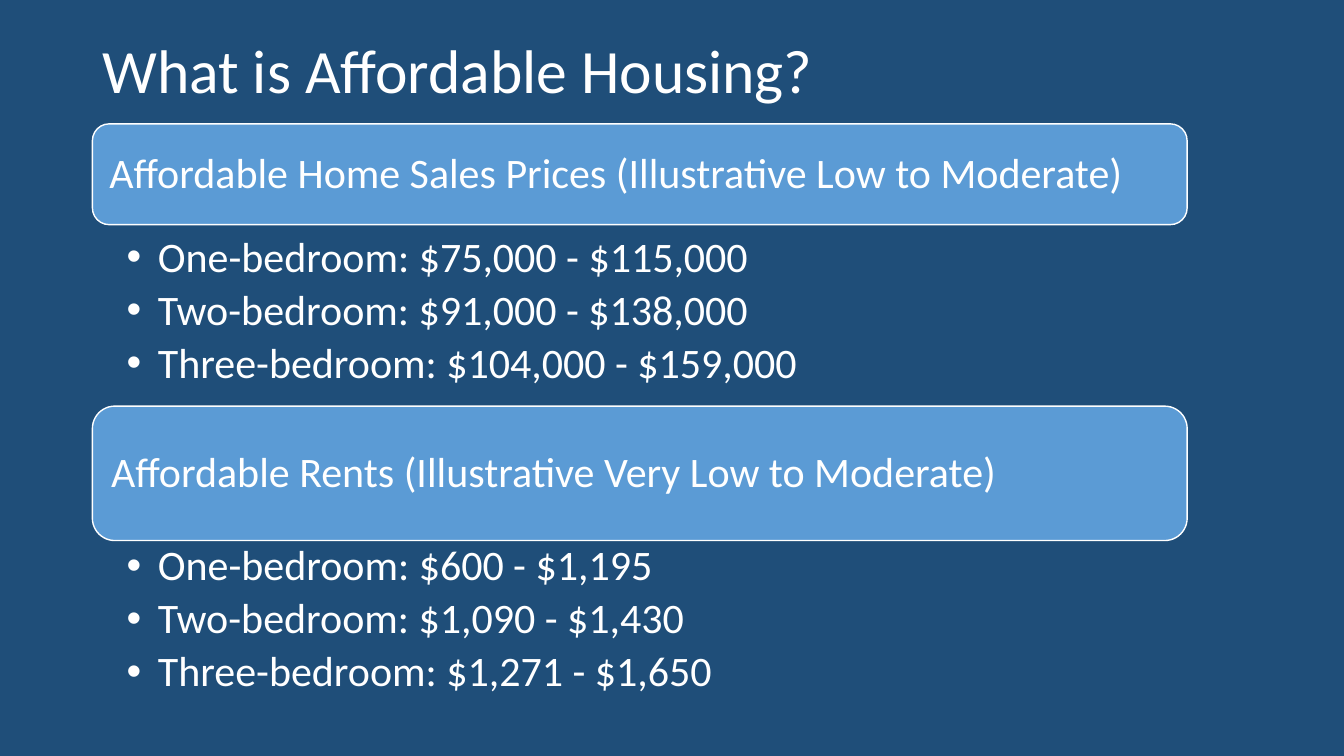
from dataclasses import dataclass

from pptx import Presentation
from pptx.dml.color import RGBColor
from pptx.enum.shapes import MSO_SHAPE
from pptx.enum.text import MSO_ANCHOR, MSO_AUTO_SIZE, PP_ALIGN
from pptx.util import Inches, Length, Pt


@dataclass(frozen=True)
class Theme:
    background: RGBColor = RGBColor(0x1F, 0x4E, 0x79)
    banner: RGBColor = RGBColor(0x5B, 0x9B, 0xD5)
    text: RGBColor = RGBColor(0xFF, 0xFF, 0xFF)
    font: str = "Calibri"
    title_size: int = 44
    body_size: int = 30


@dataclass(frozen=True)
class Section:
    heading: str
    prices: tuple[str, ...]
    banner_rows: float
    gap_rows: float


THEME = Theme()
COLUMNS, ROWS = 160, 90  # twelve grid cells to the inch
LEFT, WIDTH = 11, 130.33
FIRST_BANNER, LIST_ROWS = 14.75, 20.75

SECTIONS = (
    Section(
        "Affordable Home Sales Prices (Illustrative Low to Moderate)",
        (
            "One-bedroom: $75,000 - $115,000",
            "Two-bedroom: $91,000 - $138,000",
            "Three-bedroom: $104,000 - $159,000",
        ),
        banner_rows=12,
        gap_rows=0.85,
    ),
    Section(
        "Affordable Rents (Illustrative Very Low to Moderate)",
        (
            "One-bedroom: $600 - $1,195",
            "Two-bedroom: $1,090 - $1,430",
            "Three-bedroom: $1,271 - $1,650",
        ),
        banner_rows=16,
        gap_rows=0,
    ),
)


def cells(count: float) -> Length:
    return Inches(count / 12)


def place(sp, left: float, top: float, width: float, height: float) -> None:
    sp.left, sp.top = cells(left), cells(top)
    sp.width, sp.height = cells(width), cells(height)


def format_text(tf, size: int, anchor: MSO_ANCHOR, insets: tuple[float, ...],
                space_after: float = 0) -> None:
    tf.word_wrap = True
    tf.auto_size = MSO_AUTO_SIZE.NONE
    tf.vertical_anchor = anchor
    tf.margin_left, tf.margin_top, tf.margin_right, tf.margin_bottom = map(Inches, insets)
    for p in tf.paragraphs:
        p.alignment = PP_ALIGN.LEFT
        p.line_spacing = 0.9
        p.space_before, p.space_after = Pt(0), Pt(space_after)
        for r in p.runs:
            r.font.name = THEME.font
            r.font.size = Pt(size)
            r.font.color.rgb = THEME.text


def add_banner(slide, section: Section, top: float) -> None:
    sp = slide.shapes.add_shape(MSO_SHAPE.ROUNDED_RECTANGLE, 0, 0, 0, 0)
    place(sp, LEFT, top, WIDTH, section.banner_rows)
    sp.shadow.inherit = False
    sp.fill.solid()
    sp.fill.fore_color.rgb = THEME.banner
    sp.line.color.rgb = THEME.text
    sp.line.width = Pt(1)
    sp.text_frame.text = section.heading
    format_text(sp.text_frame, THEME.body_size, MSO_ANCHOR.MIDDLE, (0.12, 0.12, 0.12, 0.1))


def fill_list(sp, section: Section, top: float) -> None:
    place(sp, LEFT, top, WIDTH, LIST_ROWS)
    tf = sp.text_frame
    tf.text = "\n".join(section.prices)
    format_text(tf, THEME.body_size, MSO_ANCHOR.TOP, (0.34, 0.04, 0.23, 0.1), space_after=5.5)
    # Hanging indent for the bullets
    for p in tf.paragraphs:
        pPr = p._p.get_or_add_pPr()
        pPr.set("marL", str(Inches(0.31)))
        pPr.set("indent", str(Inches(-0.31)))


def main() -> None:
    prs = Presentation()
    prs.slide_width, prs.slide_height = cells(COLUMNS), cells(ROWS)
    slide = prs.slides.add_slide(prs.slide_layouts[3])
    slide.background.fill.solid()
    slide.background.fill.fore_color.rgb = THEME.background

    # Title
    title, *bodies = slide.placeholders
    place(title, LEFT, 0, 138, 17.4)
    title.text_frame.text = "What is Affordable Housing?"
    format_text(title.text_frame, THEME.title_size, MSO_ANCHOR.MIDDLE, (0.1, 0.05, 0.1, 0.05))

    # Banners, each with its price list below
    top = FIRST_BANNER
    for section, body in zip(SECTIONS, bodies):
        add_banner(slide, section, top)
        top += section.banner_rows + section.gap_rows
        fill_list(body, section, top)
        top += LIST_ROWS

    prs.save("out.pptx")


if __name__ == "__main__":
    main()
